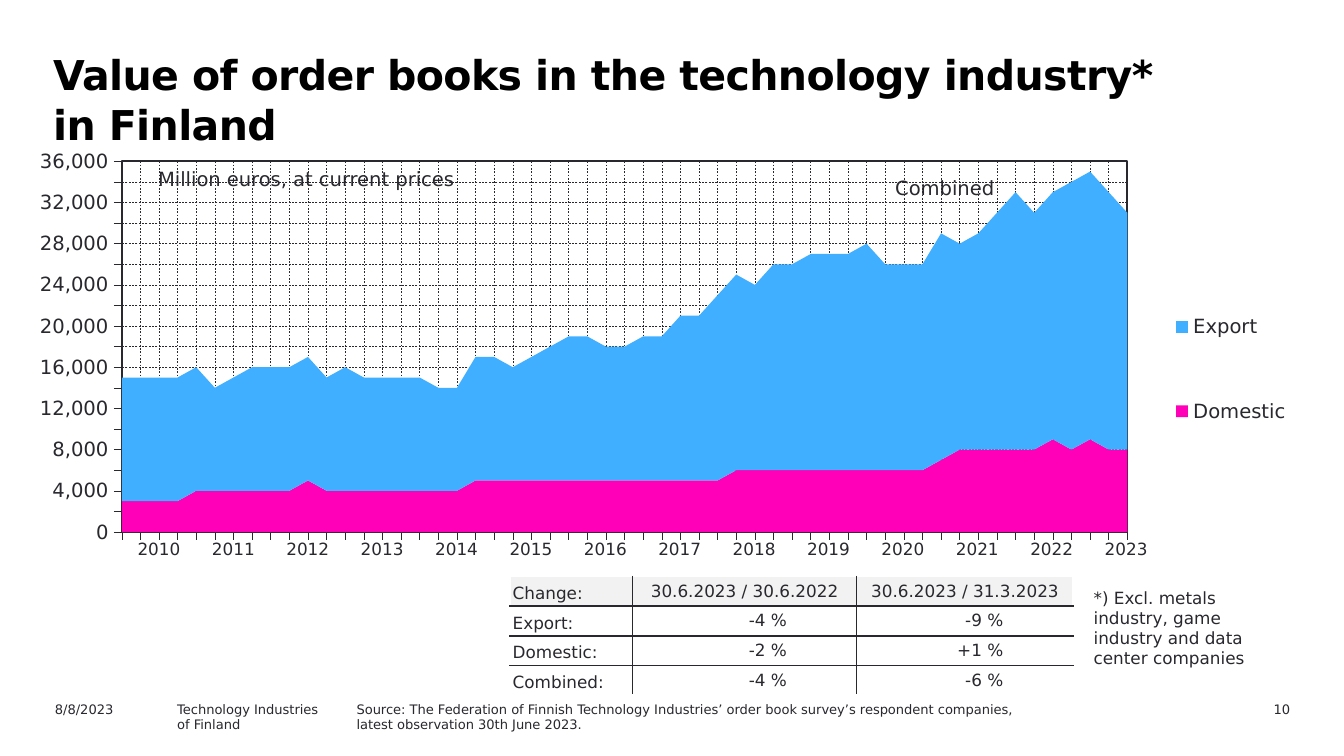
from lxml.etree import SubElement
from pptx import Presentation
from pptx.chart.data import CategoryChartData
from pptx.dml.color import RGBColor
from pptx.enum.chart import XL_CHART_TYPE, XL_LEGEND_POSITION, XL_TICK_LABEL_POSITION, XL_TICK_MARK
from pptx.enum.dml import MSO_LINE
from pptx.enum.text import MSO_ANCHOR, PP_ALIGN
from pptx.oxml import parse_xml
from pptx.oxml.ns import nsdecls, qn
from pptx.util import Cm, Pt

INK = RGBColor(0x29, 0x28, 0x2E)
BLACK = RGBColor(0x00, 0x00, 0x00)
WHITE = RGBColor(0xFF, 0xFF, 0xFF)
HEADER_GREY = RGBColor(0xF2, 0xF2, 0xF2)
PINK = RGBColor(0xFF, 0x00, 0xB8)
BLUE = RGBColor(0x40, 0xAF, 0xFF)
FONT = "DejaVu Sans"
PLAIN_TABLE = "{2D5ABB26-0587-4C30-8999-92F81FD0307C}"


def add_text(paragraph, text, size, align=PP_ALIGN.LEFT):
    paragraph.alignment = align
    run = paragraph.add_run()
    run.text = text
    run.font.name = FONT
    run.font.size = Pt(size)
    run.font.color.rgb = INK
    return run


def make_layout(x, y, width, height, target=""):
    return parse_xml(
        f'<c:layout {nsdecls("c")}><c:manualLayout>{target}'
        '<c:xMode val="edge"/><c:yMode val="edge"/>'
        f'<c:x val="{x}"/><c:y val="{y}"/><c:w val="{width}"/><c:h val="{height}"/>'
        '</c:manualLayout></c:layout>')


presentation = Presentation()
presentation.slide_width = Cm(25.4)
presentation.slide_height = Cm(14.29)
slide = presentation.slides.add_slide(presentation.slide_layouts[5])

title = slide.shapes.title
title.left, title.top, title.width, title.height = Cm(0.75), Cm(0.78), Cm(22.16), Cm(1.8)
title.text_frame.word_wrap = True
title.text_frame.vertical_anchor = MSO_ANCHOR.TOP
paragraph = title.text_frame.paragraphs[0]
paragraph.line_spacing = Pt(27)
run = add_text(paragraph, "Value of order books in the technology industry* in Finland", 22)
run.font.bold = True
run.font.color.rgb = BLACK
run._r.get_or_add_rPr().set("spc", "-30")

domestic_thousands = [
    3, 3, 3, 3, 4, 4, 4, 4, 4, 4, 5, 4, 4, 4, 4, 4, 4, 4, 4, 5, 5, 5, 5, 5, 5, 5, 5, 5,
    5, 5, 5, 5, 5, 6, 6, 6, 6, 6, 6, 6, 6, 6, 6, 6, 7, 8, 8, 8, 8, 8, 9, 8, 9, 8, 8]
export_thousands = [
    12, 12, 12, 12, 12, 10, 11, 12, 12, 12, 12, 11, 12, 11, 11, 11, 11, 10, 10, 12, 12, 11, 12, 13, 14, 14, 13, 13,
    14, 14, 16, 16, 18, 19, 18, 20, 20, 21, 21, 21, 22, 20, 20, 20, 22, 20, 21, 23, 25, 23, 24, 26, 26, 25, 23]
chart_data = CategoryChartData(number_format="#,##0")
chart_data.categories = [str(quarter) for quarter in range(1, len(domestic_thousands) + 1)]
for name, thousands in (("Domestic", domestic_thousands), ("Export", export_thousands)):
    chart_data.add_series(name, [value * 1000 for value in thousands])
chart = slide.shapes.add_chart(
    XL_CHART_TYPE.AREA_STACKED, Cm(0.49), Cm(2.82), Cm(24.15), Cm(7.92), chart_data).chart
chart.has_title = False
chart.font.name = FONT
chart.font.size = Pt(10.5)
chart.font.color.rgb = INK
chart.plots[0].vary_by_categories = False
for series, color in zip(chart.plots[0].series, (PINK, BLUE)):
    series.format.fill.solid()
    series.format.fill.fore_color.rgb = color
    series.format.line.fill.background()

for axis in (chart.category_axis, chart.value_axis):
    axis.has_major_gridlines = True
    axis.major_tick_mark = XL_TICK_MARK.OUTSIDE
    axis.minor_tick_mark = XL_TICK_MARK.NONE
    axis.format.line.color.rgb = INK
    axis.format.line.width = Pt(0.22)
    gridline = axis.major_gridlines.format.line
    gridline.color.rgb = INK
    gridline.width = Pt(0.25)
    gridline.dash_style = MSO_LINE.DASH
chart.category_axis.tick_label_position = XL_TICK_LABEL_POSITION.NONE
value_axis = chart.value_axis
value_axis.minimum_scale = 0
value_axis.maximum_scale = 36000
value_axis.major_unit = 2000
value_axis.tick_labels.number_format = "#,##0"
value_axis.tick_labels.number_format_is_linked = False

chart.has_legend = True
chart.legend.position = XL_LEGEND_POSITION.RIGHT
chart.legend.include_in_layout = False
legend = chart.legend._element
plot_area = chart._chartSpace.chart.plotArea
for parent in (legend, plot_area):
    for layout in parent.findall(qn("c:layout")):
        parent.remove(layout)
legend.find(qn("c:legendPos")).addnext(make_layout(0.888, 0.25, 0.11, 0.55))
plot_area.insert(0, make_layout(0.075, 0.029, 0.787, 0.885, '<c:layoutTarget val="inner"/>'))
plot_area.append(parse_xml(
    f'<c:spPr {nsdecls("c", "a")}><a:noFill/><a:ln w="12700"><a:solidFill>'
    f'<a:srgbClr val="{INK}"/></a:solidFill></a:ln></c:spPr>'))

change_rows = [
    ("Change:", "30.6.2023 / 30.6.2022", "30.6.2023 / 31.3.2023"),
    ("Export:", "-4 %", "-9 %"),
    ("Domestic:", "-2 %", "+1 %"),
    ("Combined:", "-4 %", "-6 %")]
change_widths = (2.31, 4.24, 4.09)
change_table = slide.shapes.add_table(4, 3, Cm(9.64), Cm(10.9), Cm(10.64), Cm(2.24)).table
years = range(2010, 2024)
year_table = slide.shapes.add_table(1, len(years), Cm(2.3), Cm(10.07), Cm(19.69), Cm(0.79)).table
for table in (change_table, year_table):
    table.first_row = False
    table.horz_banding = False
    table._tbl.tblPr.find(qn("a:tableStyleId")).text = PLAIN_TABLE

for column, width in zip(change_table.columns, change_widths):
    column.width = Cm(width)
for row, texts in enumerate(change_rows):
    for column, text in enumerate(texts):
        cell = change_table.cell(row, column)
        is_number = row > 0 and column > 0
        cell.margin_left = cell.margin_top = cell.margin_bottom = Cm(0.05)
        cell.margin_right = Cm(1.32 if is_number else 0.05)
        cell.vertical_anchor = MSO_ANCHOR.MIDDLE if column else MSO_ANCHOR.BOTTOM
        align = PP_ALIGN.RIGHT if is_number else PP_ALIGN.CENTER if column else PP_ALIGN.LEFT
        add_text(cell.text_frame.paragraphs[0], text, 9, align)
        properties = cell._tc.get_or_add_tcPr()
        outer_edges = (("lnL", column == 0), ("lnR", column == 2), ("lnT", row == 0), ("lnB", row == 3))
        for edge, is_outer in outer_edges:
            line = SubElement(properties, qn(f"a:{edge}"), w="12700")
            fill = SubElement(line, qn("a:solidFill"))
            SubElement(fill, qn("a:srgbClr"), val=str(WHITE if is_outer else INK))
        if row in (0, 3):
            cell.fill.solid()
            cell.fill.fore_color.rgb = WHITE if row else HEADER_GREY
        else:
            cell.fill.background()
for row in change_table.rows:
    row.height = Cm(0.56)

for cell, year in zip(year_table.iter_cells(), years):
    cell.fill.background()
    add_text(cell.text_frame.paragraphs[0], str(year), 9, PP_ALIGN.CENTER)

footer_top = 13.13
text_boxes = [
    (2.74, 3.03, 6.2, 0.69, 10.5, ["Million euros, at current prices"]),
    (16.67, 3.2, 2.69, 0.69, 10.5, ["Combined"]),
    (20.42, 10.98, 4.22, 1.8, 9, ["*) Excl. metals industry, game industry and data center companies"]),
    (0.79, footer_top, 2.54, 0.46, 7, ["8/8/2023"]),
    (3.1, footer_top, 4.57, 0.46, 7, ["Technology Industries", "of Finland"]),
    (6.49, footer_top, 13.21, 1.02, 7, [
        "Source: The Federation of Finnish Technology Industries’ order book survey’s "
        "respondent companies, latest observation 30th June 2023."]),
    (22.24, footer_top, 2.39, 0.46, 7, ["10"])]
for left, top, width, height, size, lines in text_boxes:
    frame = slide.shapes.add_textbox(Cm(left), Cm(top), Cm(width), Cm(height)).text_frame
    frame.word_wrap = True
    for index, line in enumerate(lines):
        paragraph = frame.add_paragraph() if index else frame.paragraphs[0]
        add_text(paragraph, line, size, PP_ALIGN.RIGHT if line == "10" else PP_ALIGN.LEFT)

presentation.save("out.pptx")
